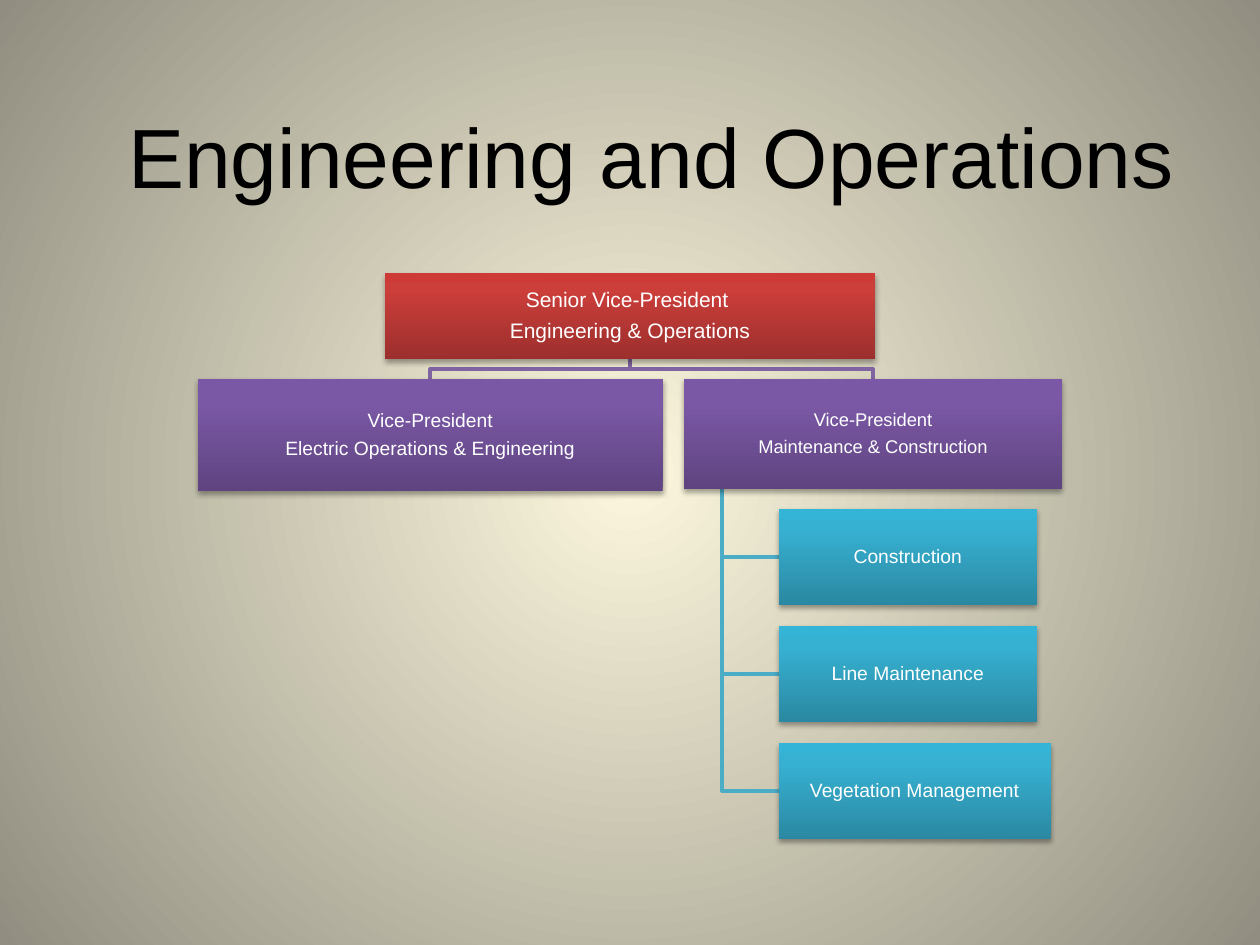
from lxml.etree import SubElement as Sub
from pptx import Presentation
from pptx.dml.color import RGBColor as Rgb
from pptx.enum.shapes import MSO_SHAPE as Kind
from pptx.enum.text import MSO_ANCHOR as Anchor, PP_ALIGN as Align
from pptx.oxml.ns import qn
from pptx.util import Inches, Pt

BLACK = Rgb(0, 0, 0)
WHITE = Rgb(255, 255, 255)
VIOLET = Rgb(0x80, 0x64, 0xA2)
AQUA = Rgb(0x4B, 0xAC, 0xC6)

# Gradient stops: (percent, colour)
GLOW = [(0, Rgb(0xFC, 0xF7, 0xDD)), (100, Rgb(0x91, 0x8E, 0x81))]
REDS = [(0, Rgb(0x9C, 0x2F, 0x2D)), (80, Rgb(0xCB, 0x3E, 0x3A)),
        (100, Rgb(0xCE, 0x3B, 0x37))]
PURPLES = [(0, Rgb(0x5F, 0x44, 0x80)), (80, Rgb(0x7B, 0x58, 0xA6)),
           (100, Rgb(0x7C, 0x57, 0xA8))]
BLUES = [(0, Rgb(0x2A, 0x88, 0xA2)), (80, Rgb(0x37, 0xB1, 0xD2)),
         (100, Rgb(0x34, 0xB4, 0xD6))]

COLS, ROWS = 100, 75


class Chart:
    """Style and slide of an organisation chart; lengths are grid cells."""
    font = "Arial"

    def __init__(self, deck):
        self.slide = deck.slides.add_slide(deck.slide_layouts[6])
        self.shapes = self.slide.shapes
        self.col = deck.slide_width / COLS
        self.row = deck.slide_height / ROWS

    def spot(self, x, y):
        return round(x * self.col), round(y * self.row)

    def blend(self, fill, root, stops):
        fill.gradient()
        grad = root.find(".//" + qn("a:gradFill"))
        items = grad.find(qn("a:gsLst"))
        items.clear()
        for share, color in stops:
            stop = Sub(items, qn("a:gs"), pos=str(share * 1000))
            Sub(stop, qn("a:srgbClr"), val=str(color))
        return grad

    def back(self, stops):
        grad = self.blend(self.slide.background.fill,
                          self.slide.element, stops)
        grad.remove(grad.find(qn("a:lin")))
        ring = Sub(grad, qn("a:path"), path="circle")
        Sub(ring, qn("a:fillToRect"),
            {side: "50000" for side in ("l", "t", "r", "b")})

    def shade(self, shape):
        shape.shadow.inherit = False
        effects = shape.element.spPr.find(qn("a:effectLst"))
        drop = Sub(effects, qn("a:outerShdw"), blurRad=str(Pt(3.1)),
                   dist=str(Pt(1.8)), dir="5400000", rotWithShape="0")
        color = Sub(drop, qn("a:srgbClr"), val=str(BLACK))
        Sub(color, qn("a:alpha"), val="35000")

    def label(self, frame, lines, size, color):
        frame.word_wrap = True
        for i, line in enumerate(lines):
            para = frame.paragraphs[0] if i == 0 else frame.add_paragraph()
            para.text = line
            para.font.name = self.font
            para.font.size = Pt(size)
            para.font.color.rgb = color
        return frame.paragraphs

    def title(self, text, x, y, w, h):
        box = self.shapes.add_textbox(*self.spot(x, y), *self.spot(w, h))
        frame = box.text_frame
        frame.vertical_anchor = Anchor.BOTTOM
        frame.margin_bottom = Inches(0.03)
        self.label(frame, [text], 48, BLACK)

    def box(self, lines, x, y, w, h, stops, size):
        shape = self.shapes.add_shape(
            Kind.RECTANGLE, *self.spot(x, y), *self.spot(w, h))
        self.blend(shape.fill, shape.element.spPr, stops)
        shape.fill.gradient_angle = 90
        shape.line.fill.background()
        self.shade(shape)
        frame = shape.text_frame
        frame.vertical_anchor = Anchor.MIDDLE
        frame.margin_left = frame.margin_right = Inches(0.01)
        frame.margin_top = frame.margin_bottom = Inches(0.01)
        for para in self.label(frame, lines, size, WHITE):
            para.alignment = Align.CENTER
            para.line_spacing = 0.9
            para.space_after = Pt(round(size * 0.4, 1))

    def elbow(self, points, color):
        first, *rest = [self.spot(x, y) for x, y in points]
        pen = self.shapes.build_freeform(*first)
        pen.add_line_segments(rest, close=False)
        shape = pen.convert_to_shape()
        shape.fill.background()
        shape.line.color.rgb = color
        shape.line.width = Pt(2)
        shape.shadow.inherit = False


def main():
    deck = Presentation()
    deck.slide_width, deck.slide_height = Inches(10), Inches(7.5)
    chart = Chart(deck)
    chart.back(GLOW)

    # Levels of the chart
    head_y, head_h = 21.7, 6.8
    vice_y = 30.1
    team_x, team_y, team_h, step = 61.8, 40.4, 7.6, 9.3
    stem_x, stem_y = 57.3, 38.8
    teams = [("Construction", 20.5), ("Line Maintenance", 20.5),
             ("Vegetation Management", 21.6)]
    vices = [("Electric Operations & Engineering", 15.7, 36.9, 8.9, 11),
             ("Maintenance & Construction", 54.3, 30, 8.7, 10.5)]

    # Branches, behind the boxes
    for i in reversed(range(len(teams))):
        mid = team_y + i * step + team_h / 2
        chart.elbow([(stem_x, stem_y), (stem_x, mid), (team_x, mid)], AQUA)
    foot = head_y + head_h
    fork = (foot + vice_y) / 2
    for _, x, w, _, _ in reversed(vices):
        mid = x + w / 2
        chart.elbow([(50, foot), (50, fork), (mid, fork), (mid, vice_y)],
                    VIOLET)

    # Boxes
    chart.box(["Senior Vice-President ", "Engineering & Operations"],
              30.55, head_y, 38.9, head_h, REDS, 12)
    for name, x, w, h, size in vices:
        chart.box(["Vice-President", name], x, vice_y, w, h, PURPLES, size)
    for i, (name, w) in enumerate(teams):
        chart.box([name], team_x, team_y + i * step, w, team_h, BLUES, 11)

    # Heading
    chart.title("Engineering and Operations", 9.2, 7.5, 85.8, 9.1)
    deck.save("out.pptx")


if __name__ == "__main__":
    main()
